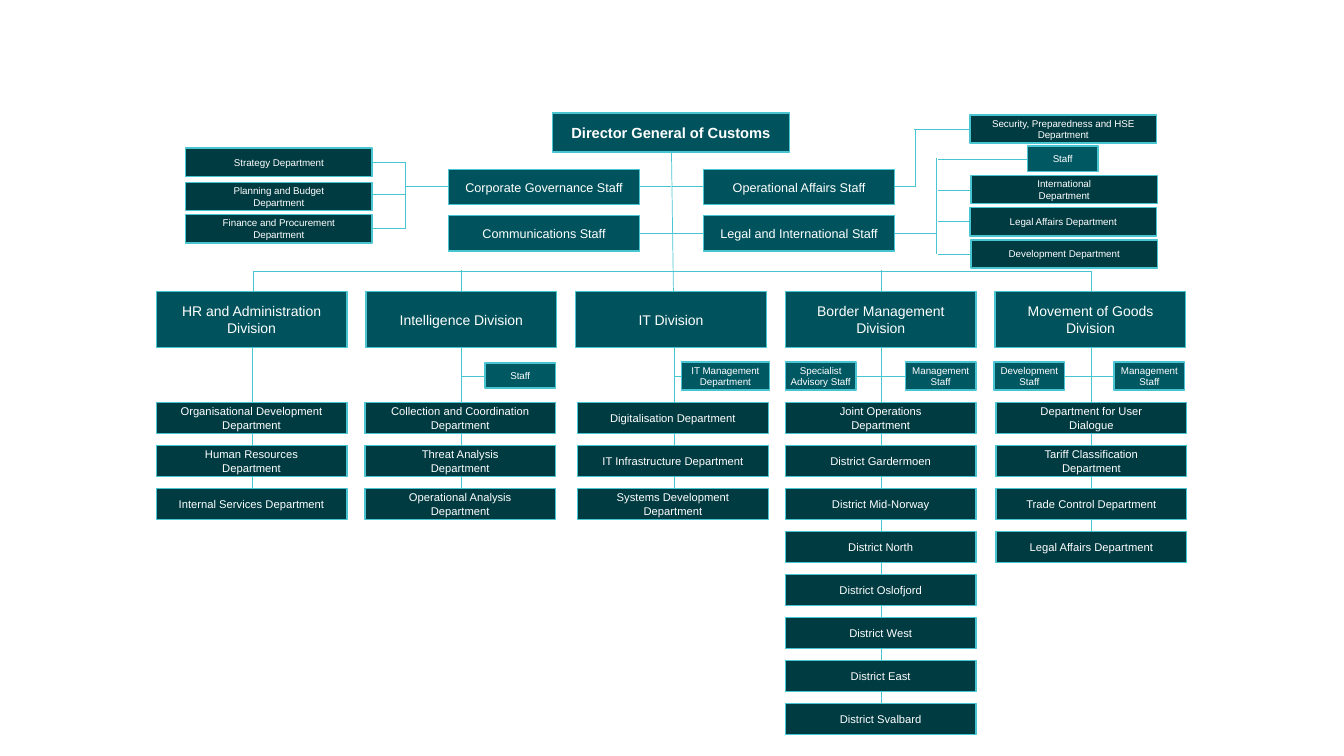
from lxml import etree
from pptx import Presentation
from pptx import util as u
from pptx.dml.color import RGBColor
from pptx.enum import shapes, text
from pptx.oxml.ns import qn

COLORS = {"division": "00535C", "department": "003B41", "staff": "005862",
          "edge": "49C4D1", "label": "FFFFFF"}

# level: fill name, font size, bold, wrap, inset
LEVELS = {
    "director": ("division", 10.5, True, True, None),
    "division": ("division", 10, False, True, None),
    "central": ("division", 9, False, True, None),
    "department": ("department", 8, False, False, None),
    "small department": ("department", 7, False, False, None),
    "staff": ("staff", 7, False, False, 0.04),
}

DIVISION_LEFT, DIVISION_PITCH, DIVISION_TOP = 1.55, 2.08, 2.89
ROW_TOP, ROW_PITCH = 3.99, 0.427
BUS_Y, STAFF_Y = 2.68, 3.73

# division, trunk x, trunk top, trunk bottom, departments left, departments
DIVISIONS = [
    ("HR and Administration Division", 2.5, 3.27, 5.09, 1.55,
     ["Organisational Development\nDepartment", "Human Resources\nDepartment",
      "Internal Services Department"]),
    ("Intelligence Division", 4.58, 3.18, 5, 3.62,
     ["Collection and Coordination\nDepartment", "Threat Analysis\nDepartment",
      "Operational Analysis\nDepartment"]),
    ("IT Division", 6.69, 3.18, 5, 5.73,
     ["Digitalisation Department", "IT Infrastructure Department",
      "Systems Development\nDepartment"]),
    ("Border Management Division", 8.74, 3.18, 7.18, 7.79,
     ["Joint Operations\nDepartment", "District Gardermoen", "District Mid-Norway",
      "District North", "District Oslofjord", "District West", "District East",
      "District Svalbard"]),
    ("Movement of Goods Division", 10.82, 3.18, 5.43, 9.88,
     ["Department for User\nDialogue", "Tariff Classification\nDepartment",
      "Trade Control Department", "Legal Affairs Department"]),
]

CENTRAL_STAFFS = [
    ("Communications Staff", 4.45, 2.14),
    ("Corporate Governance Staff", 4.45, 1.68),
    ("Legal and International Staff", 6.98, 2.14),
    ("Operational Affairs Staff", 6.98, 1.68),
]

SMALL_DEPARTMENTS = [
    ("Strategy Department", 1.84, 1.47),
    ("Planning and Budget\nDepartment", 1.84, 1.81),
    ("Finance and Procurement\nDepartment", 1.84, 2.13),
    ("Security, Preparedness and HSE\nDepartment", 9.62, 1.14),
    ("International\nDepartment", 9.63, 1.74),
    ("Legal Affairs Department", 9.62, 2.06),
    ("Development Department", 9.63, 2.38),
]

STAFFS = [
    ("Staff", 4.81, 3.6, 0.7, 0.25),
    ("IT Management\nDepartment", 6.76, 3.59, 0.87, 0.28),
    ("Specialist\nAdvisory Staff", 7.79, 3.59, 0.7, 0.28),
    ("Management\nStaff", 8.98, 3.59, 0.7, 0.28),
    ("Development\nStaff", 9.86, 3.59, 0.7, 0.28),
    ("Management\nStaff", 11.05, 3.59, 0.7, 0.28),
    ("Staff", 10.19, 1.45, 0.7, 0.25),
]

STRAIGHT_LINKS = [
    (6.66, 1.52, 6.68, 2.94),
    # central staffs
    (6.33, 1.85, 6.66, 1.85), (6.67, 1.85, 6.98, 1.85),
    (6.34, 2.32, 6.67, 2.32), (6.66, 2.32, 6.98, 2.32),
    # governance departments
    (4.02, 1.85, 4.45, 1.85), (4.02, 1.61, 4.02, 2.27),
    *[(3.7, y, 4.02, y) for y in (1.61, 1.93, 2.27)],
    # legal and international departments
    (8.87, 2.32, 9.29, 2.32), (9.29, 1.57, 9.29, 2.52), (9.3, 1.58, 10.19, 1.58),
    *[(9.3, y, 9.63, y) for y in (1.89, 2.2, 2.52)],
    # security department
    (8.87, 1.85, 9.08, 1.85), (9.08, 1.28, 9.08, 1.86), (9.07, 1.28, 9.61, 1.28),
    # drops from the bus
    *[(x, BUS_Y, x, DIVISION_TOP) for x in (4.58, 8.74)],
    # staffs inside the divisions
    *[(start, STAFF_Y, end, STAFF_Y) for start, end in
      ((4.58, 4.81), (6.69, 6.76), (8.49, 8.98), (10.56, 11.05))],
]


class OrgChart:
    def __init__(self, slide):
        self.shapes = slide.shapes
        self.font = "Arial"

    def color(self, name):
        return RGBColor.from_string(COLORS[name])

    def outline(self, line, width):
        line.color.rgb = self.color("edge")
        line.width = u.Pt(width)

    def box(self, label, left, top, width, height, level):
        fill, size, bold, wrap, inset = LEVELS[level]
        unit = self.shapes.add_shape(shapes.MSO_SHAPE.RECTANGLE,
                                     *map(u.Inches, (left, top, width, height)))
        unit.shadow.inherit = False
        unit.fill.solid()
        unit.fill.fore_color.rgb = self.color(fill)
        self.outline(unit.line, 1)
        frame = unit.text_frame
        frame.text = label
        layout = {"word_wrap": wrap, "vertical_anchor": text.MSO_ANCHOR.MIDDLE}
        if inset is not None:
            for side in ("left", "top", "right", "bottom"):
                layout[f"margin_{side}"] = u.Inches(inset)
        for name, value in layout.items():
            setattr(frame, name, value)
        for paragraph in frame.paragraphs:
            paragraph.alignment = text.PP_ALIGN.CENTER
            for name, value in {"name": self.font, "size": u.Pt(size), "bold": bold}.items():
                setattr(paragraph.font, name, value)
            paragraph.font.color.rgb = self.color("label")

    def link(self, x1, y1, x2, y2, kind=shapes.MSO_CONNECTOR.STRAIGHT):
        connector = self.shapes.add_connector(kind, *map(u.Inches, (x1, y1, x2, y2)))
        self.outline(connector.line, 0.5)
        etree.SubElement(connector.element.spPr, qn("a:effectLst"))
        return connector

    def bus(self, left, right, top, bottom):
        """Elbow that rises from left, runs along top and comes down at right."""
        middle, half, depth = (left + right) / 2, (right - left) / 2, 0.01
        connector = self.link(middle + depth / 2, bottom + half,
                              middle - depth / 2, bottom - half,
                              shapes.MSO_CONNECTOR.ELBOW)
        properties = connector.element.spPr
        properties.find(qn("a:xfrm")).set("rot", str(90 * 60000))
        geometry = properties.find(qn("a:prstGeom"))
        adjustments = geometry.find(qn("a:avLst"))
        if adjustments is None:
            adjustments = etree.SubElement(geometry, qn("a:avLst"))
        rise = round((bottom - top) / depth * 100000)
        etree.SubElement(adjustments, qn("a:gd"), name="adj1", fmla=f"val {rise}")


def main():
    deck = Presentation()
    deck.slide_width, deck.slide_height = u.Inches(13.33), u.Inches(7.5)
    chart = OrgChart(deck.slides.add_slide(deck.slide_layouts[6]))

    for ends in STRAIGHT_LINKS:
        chart.link(*ends)
    chart.bus(2.51, 10.82, BUS_Y, DIVISION_TOP)
    for _, trunk, top, bottom, _, _ in DIVISIONS:
        chart.link(trunk, top, trunk, bottom)

    chart.box("Director General of Customs", 5.48, 1.12, 2.35, 0.39, "director")
    for label, left, top in CENTRAL_STAFFS:
        chart.box(label, left, top, 1.89, 0.35, "central")
    for column, (division, _, _, _, left, departments) in enumerate(DIVISIONS):
        chart.box(division, DIVISION_LEFT + column * DIVISION_PITCH, DIVISION_TOP,
                  1.89, 0.56, "division")
        for row, department in enumerate(departments):
            chart.box(department, left, ROW_TOP + row * ROW_PITCH, 1.89, 0.31, "department")
    for label, left, top in SMALL_DEPARTMENTS:
        chart.box(label, left, top, 1.85, 0.28, "small department")
    for staff in STAFFS:
        chart.box(*staff, "staff")

    deck.save("out.pptx")


if __name__ == "__main__":
    main()
